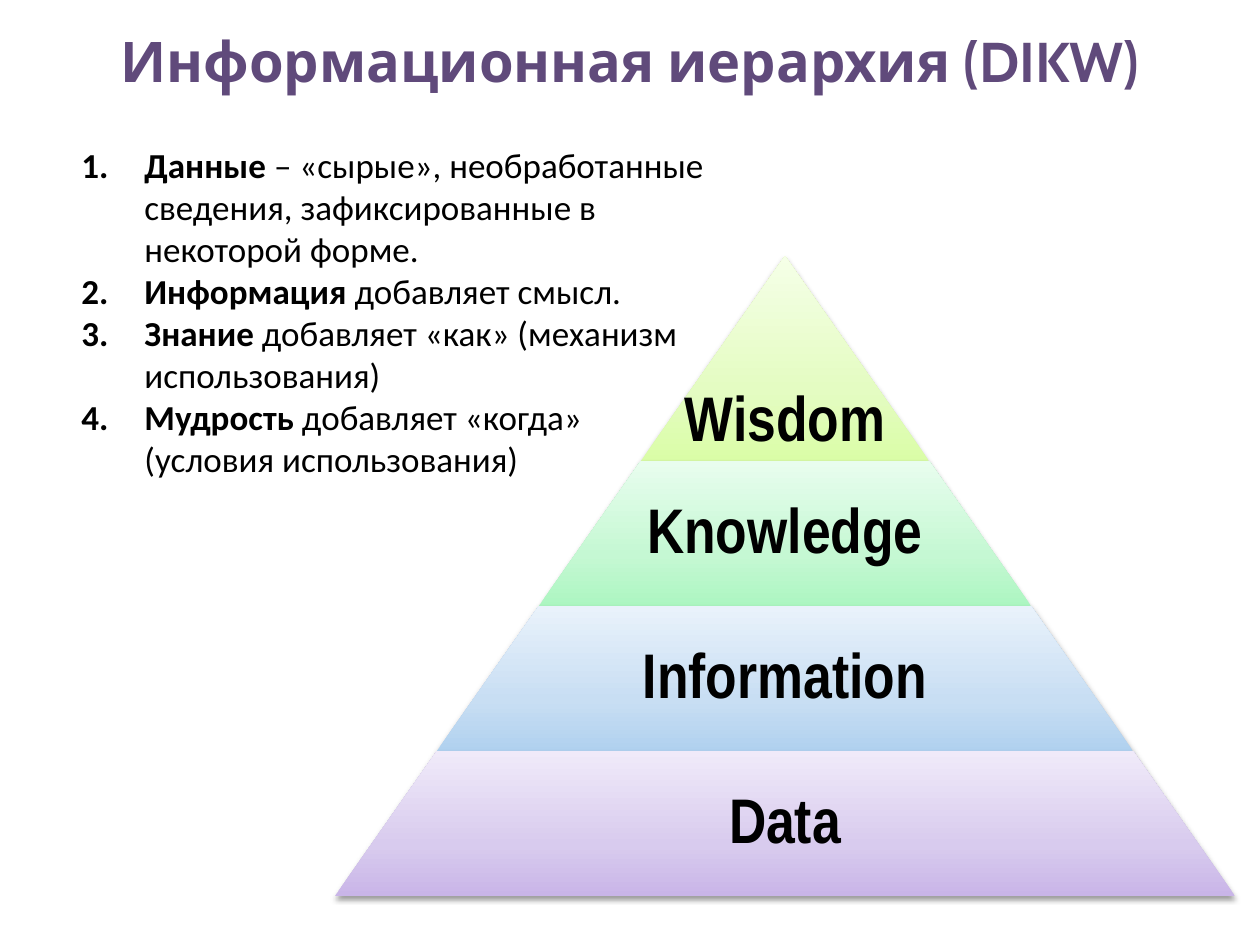
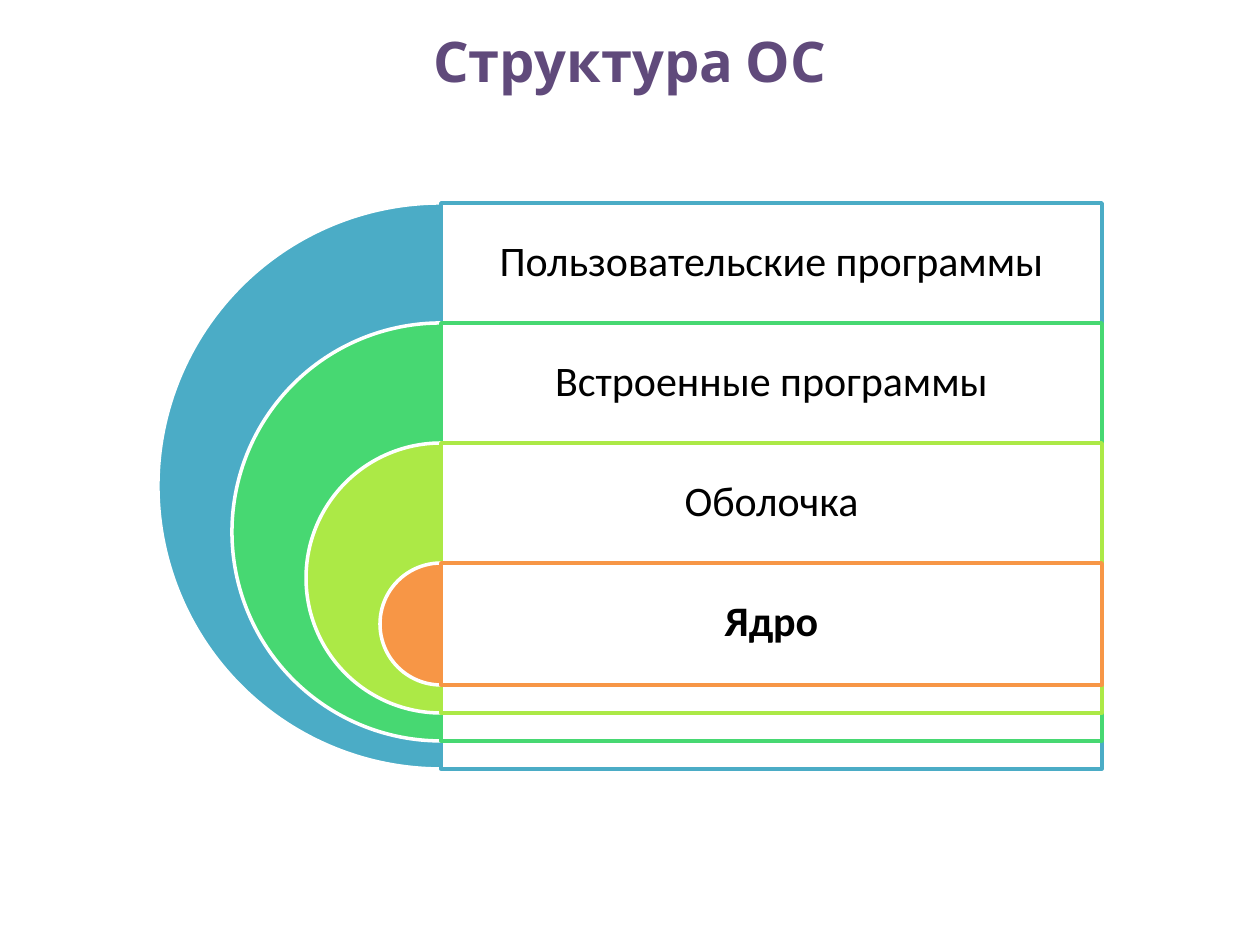
from lxml import etree
from pptx import Presentation
from pptx.dml.color import RGBColor
from pptx.enum.shapes import MSO_SHAPE as SHAPE
from pptx.enum.text import MSO_ANCHOR as ANCHOR, PP_ALIGN as ALIGN
from pptx.oxml.ns import qn
from pptx.util import Pt

PX = 914400 / 126
SLIDE_W, SLIDE_H = 1260, 945

TITLE_COLOR = RGBColor(0x60, 0x4A, 0x7B)
BLACK = RGBColor(0x00, 0x00, 0x00)
WHITE = RGBColor(0xFF, 0xFF, 0xFF)
TEAL = RGBColor(0x4B, 0xAC, 0xC6)
GREEN = RGBColor(0x47, 0xD8, 0x72)
LIME = RGBColor(0xAC, 0xE9, 0x46)
ORANGE = RGBColor(0xF7, 0x96, 0x46)

TITLE_FONT, BODY_FONT, PYRAMID_FONT = "Cabin", "Calibri", "Arial Narrow"

DEFINITIONS = [
    ("Данные", " – «сырые», необработанные сведения, зафиксированные в некоторой форме."),
    ("Информация", " добавляет смысл."),
    ("Знание", " добавляет «как» (механизм использования)"),
    ("Мудрость", " добавляет «когда» (условия использования)"),
]

# name, height, gradient colours from bottom to top
LEVELS = [
    ("Wisdom", 205, ("DAFDA7", "E4FCC2", "F5FFE7")),
    ("Knowledge", 145, ("ACF6C1", "C5F8D3", "E8FDEE")),
    ("Information", 145, ("B0D1EF", "C8DEF3", "E9F2FB")),
    ("Data", 145, ("C9B5E8", "D8CBEE", "F0EAF9")),
]
GRADIENT_STOPS = (0, 35000, 100000)

OS_LAYERS = [
    ("Пользовательские программы", TEAL, False),
    ("Встроенные программы", GREEN, False),
    ("Оболочка", LIME, False),
    ("Ядро", ORANGE, True),
]


def emu(*lengths):
    return [round(n * PX) for n in lengths]


def add_shape(slide, kind, x, y, w, h):
    sp = slide.shapes.add_shape(kind, *emu(x, y, w, h))
    sp.shadow.inherit = False
    return sp


def style(font, name, size, color=BLACK, bold=False):
    font.name, font.size, font.bold = name, Pt(size), bold
    font.color.rgb = color


def add_text_frame(slide, x, y, w, h, anchor=ANCHOR.TOP):
    tf = slide.shapes.add_textbox(*emu(x, y, w, h)).text_frame
    tf.word_wrap = True
    tf.vertical_anchor = anchor
    return tf


def add_label(slide, box, text, font, size, bold, inset, anchor=ANCHOR.MIDDLE):
    tf = add_text_frame(slide, *box, anchor)
    tf.margin_left = tf.margin_right = tf.margin_top = tf.margin_bottom = emu(inset)[0]
    p = tf.paragraphs[0]
    p.text = text
    p.alignment = ALIGN.CENTER
    p.line_spacing = 0.9
    style(p.runs[0].font, font, size, bold=bold)


def add_titled_slide(prs, title):
    slide = prs.slides.add_slide(prs.slide_layouts[6])
    p = add_text_frame(slide, 63, 20, 1134, 147).paragraphs[0]
    p.text = title
    p.alignment = ALIGN.CENTER
    style(p.runs[0].font, TITLE_FONT, 32, TITLE_COLOR, True)
    return slide


def add_numbered_list(slide, x, y, w, h, items):
    """Each item is a bold term followed by its explanation."""
    tf = add_text_frame(slide, x, y, w, h)
    indent = emu(63)[0]
    for i, item in enumerate(items):
        p = tf.add_paragraph() if i else tf.paragraphs[0]
        pPr = p._p.get_or_add_pPr()
        pPr.set("marL", str(indent))
        pPr.set("indent", str(-indent))
        etree.SubElement(pPr, qn("a:buFont"), typeface="+mj-lt")
        etree.SubElement(pPr, qn("a:buAutoNum"), type="arabicPeriod")
        for text, bold in zip(item, (True, False)):
            r = p.add_run()
            r.text = text
            style(r.font, BODY_FONT, 20, bold=bold)


def fill_upwards(sp, colors):
    sp.fill.gradient()
    sp.fill.gradient_angle = 90
    stops = sp._element.spPr.find(qn("a:gradFill")).find(qn("a:gsLst"))
    stops.clear()
    for pos, color in zip(GRADIENT_STOPS, colors):
        gs = etree.SubElement(stops, qn("a:gs"), pos=str(pos))
        etree.SubElement(gs, qn("a:srgbClr"), val=color)


def add_soft_shadow(sp):
    effects = sp._element.spPr.find(qn("a:effectLst"))
    shadow = etree.SubElement(effects, qn("a:outerShdw"), blurRad="40000",
                              dist="20000", dir="5400000", rotWithShape="0")
    color = etree.SubElement(shadow, qn("a:srgbClr"), val=str(BLACK))
    etree.SubElement(color, qn("a:alpha"), val="38000")


def add_pyramid(slide, x, y, w, h, levels):
    slope = w / 2 / h
    depth = 0
    for i, (name, level_h, colors) in enumerate(levels):
        level_w = 2 * slope * (depth + level_h)
        left, top = x + (w - level_w) / 2, y + depth
        sp = add_shape(slide, SHAPE.TRAPEZOID, left, top, level_w, level_h)
        sp.adjustments[0] = slope
        sp.line.fill.background()
        fill_upwards(sp, colors)
        add_soft_shadow(sp)

        label_w = level_w * 0.65 if i else level_w
        box = (x + (w - label_w) / 2, top, label_w, level_h)
        add_label(slide, box, name, PYRAMID_FONT, 36, True, 6,
                  ANCHOR.MIDDLE if i else ANCHOR.BOTTOM)
        depth += level_h


def add_nested_layers(slide, x, y, w, h, layers):
    """Half discs nested inside each other, each with a panel to its right."""
    step, shrink = 120, 148
    axis = x + h / 2
    panel_w = w - h / 2
    for i, (name, color, bold) in enumerate(layers):
        top, size = y + i * step, h - i * shrink
        disc = add_shape(slide, SHAPE.PIE, axis - size / 2, top, size, size)
        disc.adjustments[0], disc.adjustments[1] = 54, 162  # 90° to 270°
        panel = add_shape(slide, SHAPE.RECTANGLE, axis, top, panel_w, size)
        for sp, fill, line in ((disc, color, WHITE), (panel, WHITE, color)):
            sp.fill.solid()
            sp.fill.fore_color.rgb = fill
            sp.line.color.rgb = line
            sp.line.width = Pt(2)
        panel_color = panel._element.spPr.find(qn("a:solidFill"))[0]
        etree.SubElement(panel_color, qn("a:alpha"), val="90000")
        add_label(slide, (axis, top, panel_w, step), name, BODY_FONT, 24, bold, 12)


def main():
    prs = Presentation()
    prs.slide_width, prs.slide_height = emu(SLIDE_W, SLIDE_H)

    slide = add_titled_slide(prs, "Информационная иерархия (DIKW)")
    add_numbered_list(slide, 69, 137, 650, 352, DEFINITIONS)
    add_pyramid(slide, 335, 256, 900, 640, LEVELS)

    slide = add_titled_slide(prs, "Структура ОС")
    add_nested_layers(slide, 158, 203, 944, 566, OS_LAYERS)

    prs.save("out.pptx")


if __name__ == "__main__":
    main()
